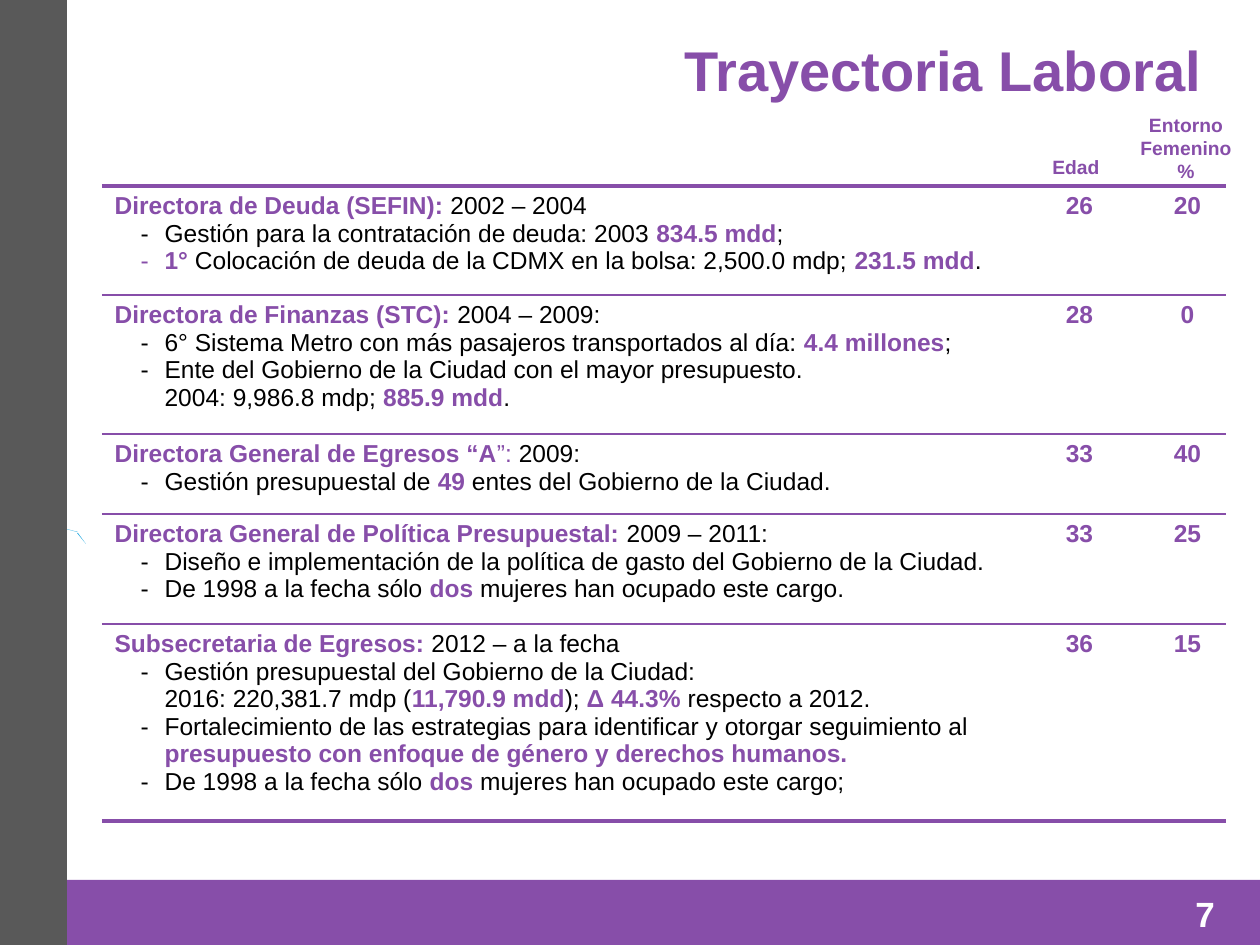
from collections import namedtuple
from functools import partial

from lxml.etree import SubElement
from pptx import Presentation
from pptx.dml.color import RGBColor
from pptx.enum.shapes import MSO_SHAPE
from pptx.enum.text import MSO_ANCHOR, PP_ALIGN
from pptx.oxml.ns import qn
from pptx.util import Pt

EMU_PER_PX = 914400 / 126
PURPLE, GREY, BLUE, BLACK, WHITE = "874EA9", "595959", "29ABE2", "000000", "FFFFFF"

Run = namedtuple("Run", "text color bold")
plain = partial(Run, color=BLACK, bold=False)
strong = partial(Run, color=PURPLE, bold=True)
light = partial(Run, color=PURPLE, bold=False)

Position = namedtuple("Position", "height title details age women")
Detail = namedtuple("Detail", "marker runs")
bullet = partial(Detail, "-")
continuation = partial(Detail, None)

POSITIONS = [
    Position(109, [strong("Directora de Deuda (SEFIN): "), plain("2002 – 2004")], [
        bullet([plain("Gestión para la contratación de deuda: 2003 "),
                strong("834.5 mdd"), plain(";")]),
        bullet([strong("1° "), plain("Colocación de deuda de la CDMX en la bolsa: 2,500.0 mdp; "),
                strong("231.5 mdd"), plain(".")]),
    ], "26", "20"),
    Position(139, [strong("Directora de Finanzas (STC): "), plain("2004 – 2009:")], [
        bullet([plain("6° Sistema Metro con más pasajeros transportados al día: "),
                strong("4.4 millones"), plain(";")]),
        bullet([plain("Ente del Gobierno de la Ciudad con el mayor presupuesto.")]),
        continuation([plain("2004: 9,986.8 mdp; "), strong("885.9 mdd"), plain(".")]),
    ], "28", "0"),
    Position(80, [strong("Directora General de Egresos “A"), light("”:"), plain(" 2009:")], [
        bullet([plain("Gestión presupuestal de "), strong("49 "),
                plain("entes del Gobierno de la Ciudad.")]),
    ], "33", "40"),
    Position(110, [strong("Directora General de Política Presupuestal: "),
                   plain("2009 – 2011:")], [
        bullet([plain("Diseño e implementación de la política de gasto "
                      "del Gobierno de la Ciudad.")]),
        bullet([plain("De 1998 a la fecha sólo "), strong("dos "),
                plain("mujeres han ocupado este cargo.")]),
    ], "33", "25"),
    Position(197, [strong("Subsecretaria de Egresos:"), plain(" 2012 – a la fecha")], [
        bullet([plain("Gestión presupuestal del Gobierno de la Ciudad:")]),
        continuation([plain("2016: 220,381.7 mdp ("), strong("11,790.9 mdd"), plain("); "),
                      strong("Δ 44.3% "), plain("respecto a 2012.")]),
        bullet([plain("Fortalecimiento de las estrategias para identificar "
                      "y otorgar seguimiento al "),
                strong("presupuesto con enfoque de género y derechos humanos.")]),
        bullet([plain("De 1998 a la fecha sólo "), strong("dos"),
                plain(" mujeres han ocupado este cargo;")]),
    ], "36", "15"),
]


def px(length):
    """Turn pixels into EMU."""
    return round(length * EMU_PER_PX)


def rgb(hex_color):
    """Turn a hex string into a colour."""
    return RGBColor.from_string(hex_color)


def paint(shape, color):
    """Give a shape a flat fill without line or shadow."""
    shape.shadow.inherit = False
    shape.fill.solid()
    shape.fill.fore_color.rgb = rgb(color)
    shape.line.fill.background()


def add_bar(slide, left, top, width, height, color):
    """Add a plain coloured bar."""
    bar = slide.shapes.add_shape(MSO_SHAPE.RECTANGLE, px(left), px(top), px(width), px(height))
    paint(bar, color)


def add_sliver(slide, corners):
    """Add a thin blue triangle."""
    builder = slide.shapes.build_freeform(*corners[0], scale=EMU_PER_PX)
    builder.add_line_segments(corners[1:], close=True)
    paint(builder.convert_to_shape(), BLUE)


def add_runs(paragraph, runs, size):
    """Write styled runs into a paragraph."""
    for part in runs:
        run = paragraph.add_run()
        run.text = part.text
        run.font.name = "Arial"
        run.font.size = Pt(size)
        run.font.bold = part.bold
        run.font.color.rgb = rgb(part.color)


def indent(paragraph, left, marker=None):
    """Indent a paragraph, with a hanging marker if one is given."""
    properties = paragraph._p.get_or_add_pPr()
    properties.set("marL", str(px(left)))
    properties.set("indent", str(px(-24 if marker else 0)))
    if marker:
        SubElement(properties, qn("a:buFont"), typeface="Arial")
        SubElement(properties, qn("a:buChar"), char=marker)


def add_label(slide, box, lines, size, color=PURPLE, align=PP_ALIGN.LEFT, wrap=True, left=0):
    """Add a bold text box with one paragraph per line."""
    frame = slide.shapes.add_textbox(*map(px, box)).text_frame
    frame.word_wrap = wrap
    for number, line in enumerate(lines):
        paragraph = frame.add_paragraph() if number else frame.paragraphs[0]
        paragraph.alignment = align
        indent(paragraph, left)
        add_runs(paragraph, [Run(line, color, True)], size)


def set_borders(cell, top, bottom):
    """Rule a cell above and below, leaving its sides and fill empty."""
    properties = cell._tc.get_or_add_tcPr()
    for side in ("a:lnL", "a:lnR"):
        SubElement(SubElement(properties, qn(side), w="0"), qn("a:noFill"))
    for side, weight in (("a:lnT", top), ("a:lnB", bottom)):
        line = SubElement(properties, qn(side), w=str(Pt(weight)))
        SubElement(SubElement(line, qn("a:solidFill")), qn("a:srgbClr"), val=PURPLE)
    cell.fill.background()


def fill_description(cell, position):
    """Write a job title and its details."""
    frame = cell.text_frame
    add_runs(frame.paragraphs[0], position.title, 14)
    for detail in position.details:
        paragraph = frame.add_paragraph()
        indent(paragraph, 50, detail.marker)
        add_runs(paragraph, detail.runs, 14)


def fill_figure(cell, figure):
    """Write a centred figure."""
    cell.margin_left = cell.margin_right = 0
    paragraph = cell.text_frame.paragraphs[0]
    paragraph.alignment = PP_ALIGN.CENTER
    add_runs(paragraph, [strong(figure)], 14)


def add_career_table(slide, left, top, widths):
    """Add the table of positions held."""
    height = sum(position.height for position in POSITIONS)
    table = slide.shapes.add_table(len(POSITIONS), len(widths), px(left), px(top),
                                   px(sum(widths)), px(height)).table
    table.first_row = table.horz_banding = False
    for column, width in zip(table.columns, widths):
        column.width = px(width)
    weights = [2.25] + [1] * (len(POSITIONS) - 1) + [2.25]
    for row, position, above, below in zip(table.rows, POSITIONS, weights, weights[1:]):
        row.height = px(position.height)
        description, age, women = row.cells
        fill_description(description, position)
        fill_figure(age, position.age)
        fill_figure(women, position.women)
        for cell in row.cells:
            cell.vertical_anchor = MSO_ANCHOR.TOP
            set_borders(cell, above, below)


def main():
    """Build the slide and save it."""
    deck = Presentation()
    deck.slide_width, deck.slide_height = px(1260), px(945)
    slide = deck.slides.add_slide(deck.slide_layouts[6])
    add_sliver(slide, [(78, 532), (28, 519), (77, 532)])
    add_sliver(slide, [(77, 533), (86, 544), (78, 533)])
    add_bar(slide, 0, 0, 67, 945, GREY)
    add_bar(slide, 67, 880, 1193, 65, PURPLE)
    add_label(slide, (668, 29, 546, 81), ["Trayectoria Laboral"], 32,
              align=PP_ALIGN.RIGHT, wrap=False)
    add_career_table(slide, 102, 186, [908, 139, 77])
    add_label(slide, (1101, 107, 144, 83), ["Entorno", "Femenino", "%"], 11,
              align=PP_ALIGN.CENTER, left=26)
    add_label(slide, (1014, 149, 100, 37), ["Edad"], 11, left=26)
    add_label(slide, (1183, 886, 45, 55), ["7"], 20, color=WHITE, wrap=False)
    deck.save("out.pptx")


if __name__ == "__main__":
    main()
